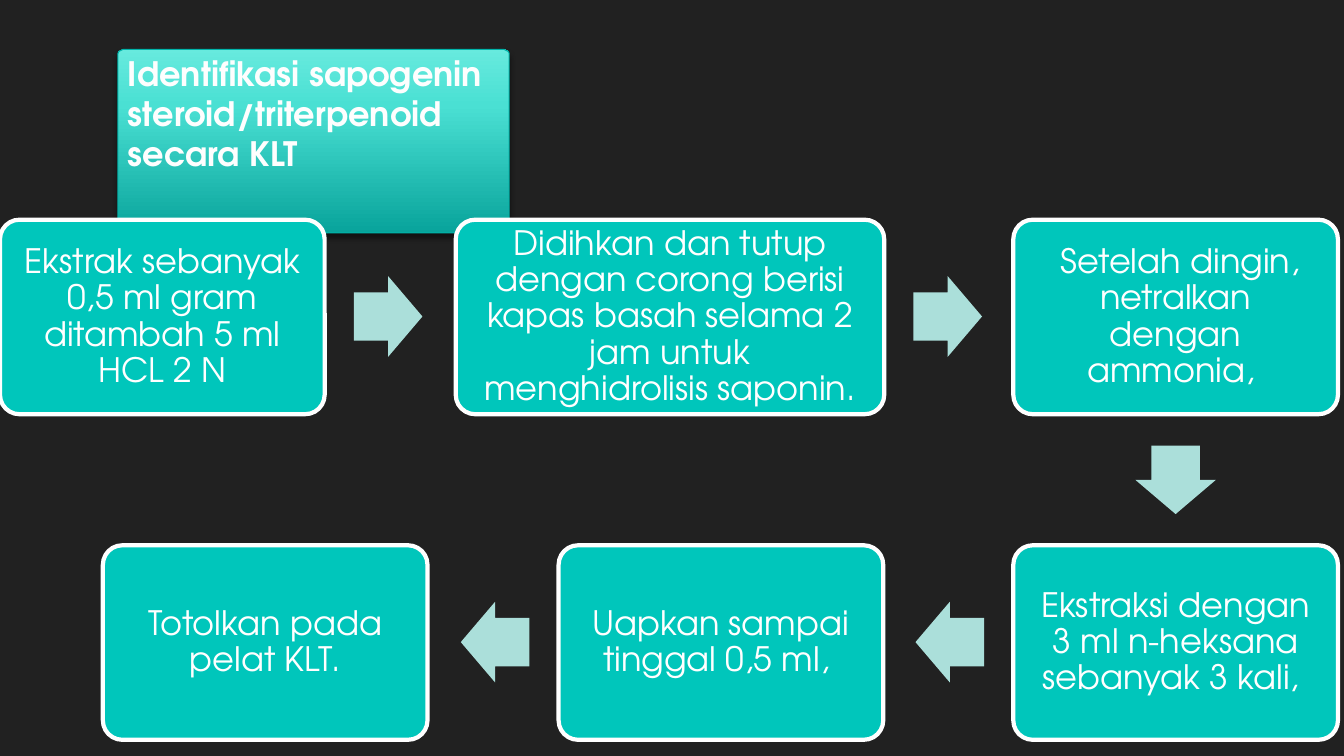
import copy

import pptx
import pptx.dml.color
import pptx.enum.shapes
import pptx.enum.text
import pptx.oxml
import pptx.oxml.ns
import pptx.util

RGB = pptx.dml.color.RGBColor
SHAPE = pptx.enum.shapes.MSO_SHAPE
ANCHOR = pptx.enum.text.MSO_ANCHOR
ALIGN = pptx.enum.text.PP_ALIGN

BACKDROP = RGB(0x21, 0x21, 0x21)
TEAL = RGB(0x00, 0xC6, 0xBB)
PALE_TEAL = RGB(0xAB, 0xDF, 0xDA)
BANNER_EDGE = RGB(0x00, 0xB4, 0xAA)
WHITE = RGB(0xFF, 0xFF, 0xFF)
TITLE_WHITE = RGB(0xFE, 0xFE, 0xFE)
BANNER_STOPS = [
    (0, RGB(0x00, 0x9C, 0x94)),
    (0.72, RGB(0x4A, 0xE0, 0xD3)),
    (1, RGB(0x67, 0xEA, 0xDE)),
]

PX = 9144
ROW_TOPS = [218, 541]
BOX_W, BOX_H = 322, 193
ARROW_W, ARROW_H = 68, 80
ARROW_GAP = 29
INSET = 16

STEPS = [
    (0, 0, BOX_W, "Ekstrak sebanyak 0,5 ml gram ditambah 5 ml HCL 2 N"),
    (452, 0, 425, "Didihkan dan tutup dengan corong berisi kapas basah selama 2 jam untuk menghidrolisis saponin."),
    (1005, 0, BOX_W, " Setelah dingin, netralkan dengan ammonia, "),
    (1005, 1, BOX_W, "Ekstraksi dengan 3 ml n-heksana sebanyak 3 kali, "),
    (554, 1, BOX_W, "Uapkan sampai tinggal 0,5 ml, "),
    (102, 1, BOX_W, "Totolkan pada pelat KLT."),
]


def write_text(shape, text, frame_format, paragraph_format, font_format):
    frame = shape.text_frame
    paragraph = frame.paragraphs[0]
    run = paragraph.add_run()
    run.text = text
    for target, values in (
        (frame, frame_format),
        (paragraph, paragraph_format),
        (run.font, {"name": "TeX Gyre Adventor", "size": pptx.util.Pt(24), **font_format}),
    ):
        for key, value in values.items():
            setattr(target, key, value)
    return run


def shadow_effect(blur, distance):
    return pptx.oxml.parse_xml(
        f'<a:effectLst {pptx.oxml.ns.nsdecls("a")}>'
        f'<a:outerShdw blurRad="{pptx.util.Pt(blur)}" dist="{pptx.util.Pt(distance)}" dir="5400000" rotWithShape="0">'
        '<a:srgbClr val="000000"><a:alpha val="43000"/></a:srgbClr></a:outerShdw></a:effectLst>'
    )


deck = pptx.Presentation()
deck.slide_width, deck.slide_height = 1333 * PX, 750 * PX
slide = deck.slides.add_slide(deck.slide_layouts[6])
slide.background.fill.solid()
slide.background.fill.fore_color.rgb = BACKDROP

outline = slide.shapes.build_freeform(122, 49, scale=PX)
outline.add_line_segments([
    (500, 49), (504, 51), (505, 53), (505, 227), (504, 229), (500, 231),
    (219, 231), (199, 246), (195, 247), (192, 246), (172, 231),
    (122, 231), (118, 229), (117, 227), (117, 53), (118, 51),
], close=True)
banner = outline.convert_to_shape()
banner.fill.gradient()
banner.fill.gradient_angle = 90
stop_list = banner.element.spPr.find(".//" + pptx.oxml.ns.qn("a:gsLst"))
stop_list.append(copy.deepcopy(stop_list[-1]))
for stop, (position, color) in zip(banner.fill.gradient_stops, BANNER_STOPS):
    stop.position = position
    stop.color.rgb = color
banner.line.color.rgb = BANNER_EDGE
banner.line.width = pptx.util.Pt(0.75)
banner.element.spPr.append(shadow_effect(4, 3))

title = slide.shapes.add_textbox(117 * PX, 0, 388 * PX, 177 * PX)
title_run = write_text(
    title,
    "Identifikasi sapogenin steroid/triterpenoid secara KLT",
    {"word_wrap": True, "vertical_anchor": ANCHOR.BOTTOM},
    {"alignment": ALIGN.LEFT},
    {"bold": True},
)
title_run.font.color.rgb = TITLE_WHITE
title_run.font.fill._xPr.find(pptx.oxml.ns.qn("a:solidFill")).addnext(shadow_effect(4, 3))

box_frame = {"word_wrap": True, "vertical_anchor": ANCHOR.MIDDLE}
for side in ("left", "right", "top", "bottom"):
    box_frame[f"margin_{side}"] = INSET * PX

for index, (left, row, width, text) in enumerate(STEPS):
    top = ROW_TOPS[row]
    box = slide.shapes.add_shape(
        SHAPE.ROUNDED_RECTANGLE, left * PX, top * PX, width * PX, BOX_H * PX)
    box.adjustments[0] = 0.1
    box.shadow.inherit = False
    box.fill.solid()
    box.fill.fore_color.rgb = TEAL
    box.line.color.rgb = WHITE
    box.line.width = pptx.util.Pt(3)
    step_run = write_text(
        box, text, box_frame, {"alignment": ALIGN.CENTER, "line_spacing": 0.9}, {})
    step_run.font.color.rgb = WHITE

    if index == len(STEPS) - 1:
        continue
    arrow_left = left + width + ARROW_GAP
    arrow_top = top + (BOX_H - ARROW_H) // 2
    turn = 0
    if STEPS[index + 1][1] != row:
        arrow_left = left + (width - ARROW_W) // 2
        arrow_top = (top + BOX_H + ROW_TOPS[1] - ARROW_H) // 2
        turn = 90
    elif row == 1:
        arrow_left = left - ARROW_GAP - ARROW_W
        turn = 180
    arrow = slide.shapes.add_shape(
        SHAPE.RIGHT_ARROW, arrow_left * PX, arrow_top * PX, ARROW_W * PX, ARROW_H * PX)
    arrow.adjustments[0] = 0.6
    arrow.adjustments[1] = 0.5
    arrow.rotation = turn
    arrow.shadow.inherit = False
    arrow.fill.solid()
    arrow.fill.fore_color.rgb = PALE_TEAL
    arrow.line.fill.background()

deck.save("out.pptx")
